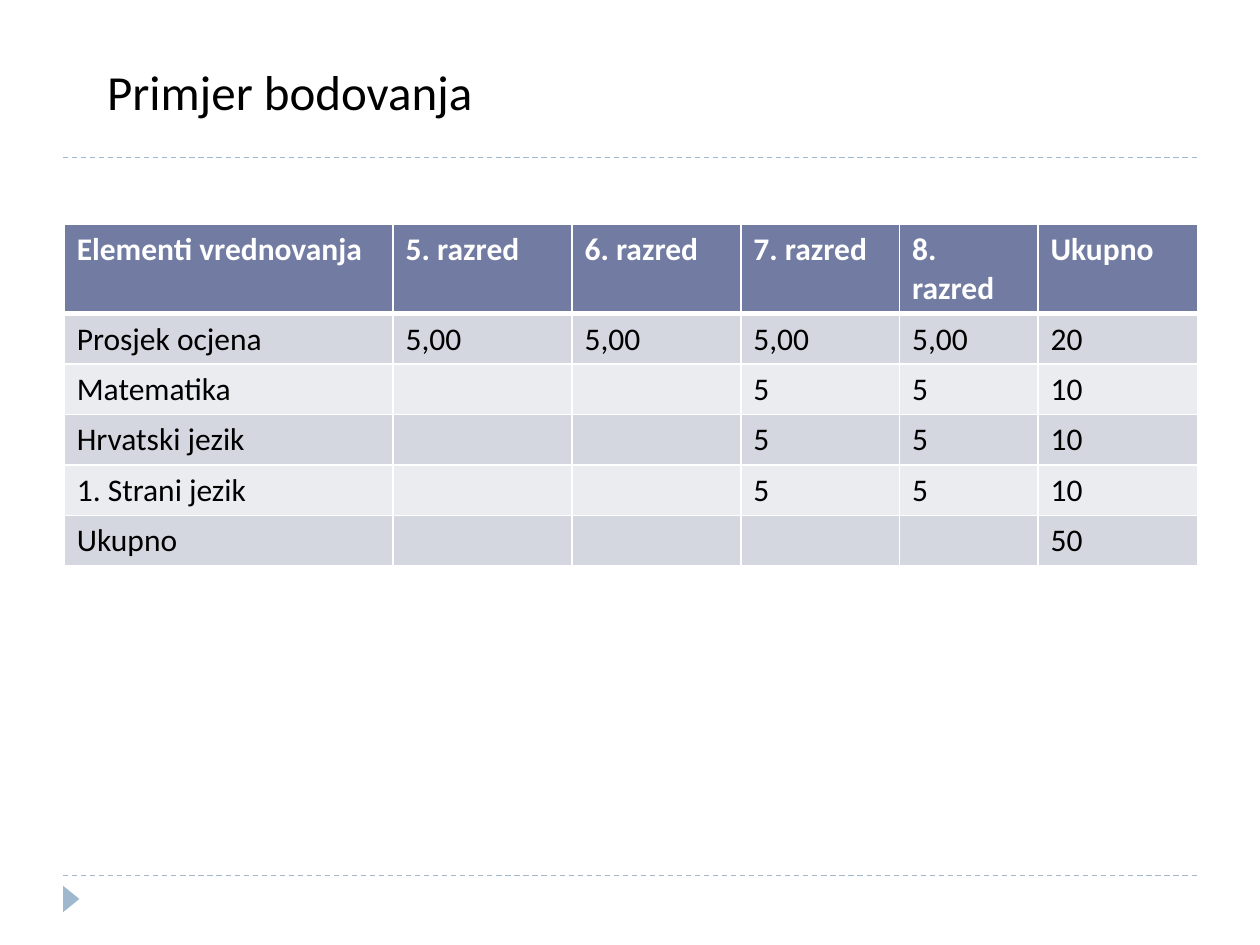
from pptx import Presentation
from pptx import util as u
from pptx.dml import color
from pptx.enum import dml, shapes, text
from pptx.oxml import ns
from lxml import etree

COLUMN_WIDTHS = [2.61, 1.42, 1.34, 1.26, 1.1, 1.27]
ROW_HEIGHTS = [0.71] + [0.4] * 5
SCORES = [
    ["Elementi vrednovanja", "5. razred", "6. razred", "7. razred", "8. razred", "Ukupno"],
    ["Prosjek ocjena", "5,00", "5,00", "5,00", "5,00", "20"],
    ["Matematika", "", "", "5", "5", "10"],
    ["Hrvatski jezik", "", "", "5", "5", "10"],
    ["1. Strani jezik", "", "", "5", "5", "10"],
    ["Ukupno", "", "", "", "", "50"],
]


def rgb(value):
    return color.RGBColor.from_string(value)


def apply(target, values):
    for name, value in values.items():
        setattr(target, name, value)


def inches(*values):
    return [u.Inches(value) for value in values]


class SlideBuilder:
    font = "Calibri"
    accent = "9FB8CD"
    header = "727CA3"
    bands = ["D5D7E0", "EBECF0"]

    def __init__(self, deck):
        self.page = deck.slides.add_slide(deck.slide_layouts[5])

    def add_span(self, para, words, size, ink, bold=False):
        span = para.add_run()
        span.text = words
        apply(span.font, {"name": self.font, "size": u.Pt(size), "bold": bold})
        span.font.color.rgb = rgb(ink)

    def title(self, words, left, top, width, height):
        box = self.page.shapes.title
        left, top, width, height = inches(left, top, width, height)
        apply(box, {"left": left, "top": top, "width": width, "height": height})
        apply(box.text_frame, {
            "word_wrap": False,
            "auto_size": text.MSO_AUTO_SIZE.SHAPE_TO_FIT_TEXT,
            "vertical_anchor": text.MSO_ANCHOR.TOP,
        })
        para = box.text_frame.paragraphs[0]
        para.alignment = text.PP_ALIGN.LEFT
        self.add_span(para, words, 28, "000000")

    def rule(self, left, right, top):
        line = self.page.shapes.add_connector(
            shapes.MSO_CONNECTOR.STRAIGHT, *inches(left, top, right, top))
        apply(line.line, {"width": u.Pt(0.75), "dash_style": dml.MSO_LINE.DASH})
        line.line.color.rgb = rgb(self.accent)
        etree.SubElement(line._element.spPr, ns.qn("a:effectLst"))

    def marker(self, left, top, width, height):
        shape = self.page.shapes.add_shape(
            shapes.MSO_SHAPE.ISOSCELES_TRIANGLE, *inches(left, top, width, height))
        shape.rotation = 90
        shape.shadow.inherit = False
        shape.fill.solid()
        shape.fill.fore_color.rgb = rgb(self.accent)
        shape.line.fill.background()

    def border(self, cell, side, points):
        properties = cell._tc.get_or_add_tcPr()
        edge = etree.SubElement(properties, ns.qn("a:ln" + side), w=str(u.Pt(points)))
        fill = etree.SubElement(edge, ns.qn("a:solidFill"))
        etree.SubElement(fill, ns.qn("a:srgbClr"), val="FFFFFF")

    def table(self, rows, widths, heights, left, top):
        grid = self.page.shapes.add_table(
            len(rows), len(widths), *inches(left, top, sum(widths), sum(heights))).table
        for column, width in zip(grid.columns, widths):
            column.width = u.Inches(width)
        for index, (row, height) in enumerate(zip(grid.rows, heights)):
            row.height = u.Inches(height)
            heading = index == 0
            fill = self.header if heading else self.bands[(index - 1) % 2]
            ink = "FFFFFF" if heading else "000000"
            for cell, words in zip(row.cells, rows[index]):
                for side in "LRTB":
                    thick = (side == "B" and heading) or (side == "T" and index == 1)
                    self.border(cell, side, 3 if thick else 1)
                cell.fill.solid()
                cell.fill.fore_color.rgb = rgb(fill)
                if words:
                    self.add_span(cell.text_frame.paragraphs[0], words, 18, ink, heading)


def main():
    deck = Presentation()
    apply(deck, {"slide_width": u.Inches(10), "slide_height": u.Inches(7.5)})
    builder = SlideBuilder(deck)
    for top in (6.95, 1.25):
        builder.rule(0.5, 9.5, top)
    builder.marker(0.46, 7.07, 0.21, 0.13)
    builder.table(SCORES, COLUMN_WIDTHS, ROW_HEIGHTS, 0.51, 1.78)
    builder.title("Primjer bodovanja", 0.75, 0.44, 4.02, 0.57)
    deck.save("out.pptx")


if __name__ == "__main__":
    main()
